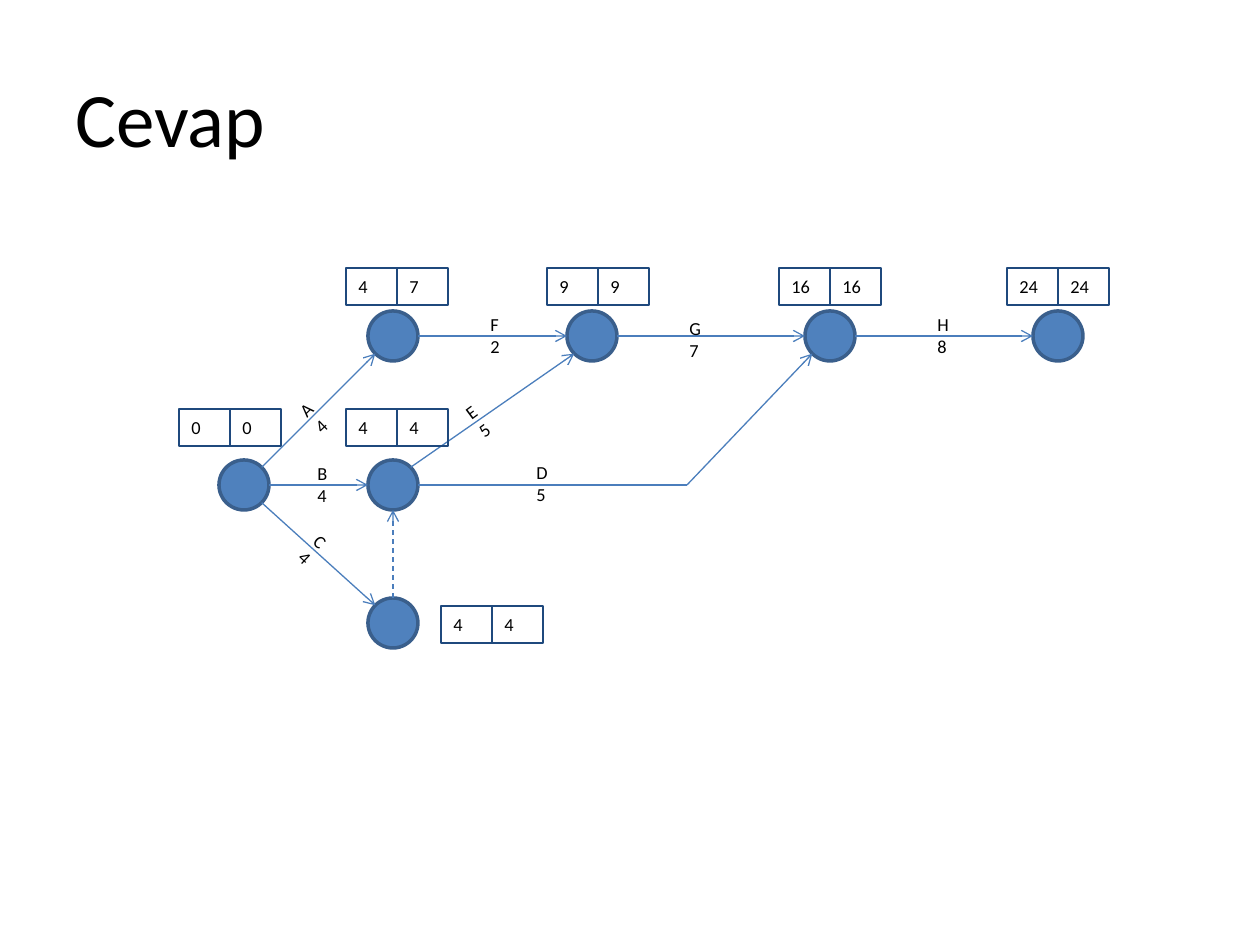
"""Builds the activity network slide with event times."""
import math

import pptx
import pptx.dml.color
import pptx.enum.dml
import pptx.enum.shapes
import pptx.enum.text
import pptx.oxml
import pptx.oxml.ns
import pptx.util

RGBColor = pptx.dml.color.RGBColor
BLACK = RGBColor(0x00, 0x00, 0x00)
NODE_FILL = RGBColor(0x4F, 0x81, 0xBD)
NODE_EDGE = RGBColor(0x3A, 0x5F, 0x8C)
ARROW = RGBColor(0x4B, 0x7E, 0xBC)
CELL_EDGE = RGBColor(0x1F, 0x49, 0x7D)

TITLE = "Cevap"
FONT = "Calibri"
PX_PER_INCH = 126
RADIUS = 25
CELL_WIDTH, CELL_HEIGHT = 51, 37
LABEL_WIDTH, LABEL_HEIGHT = 69, 57

EVENTS = {
    "start": (244, 485),
    "after A": (393, 336),
    "after C": (393, 623),
    "after B": (393, 485),
    "after F": (592, 336),
    "after G": (830, 336),
    "end": (1058, 336),
}
BENDS = {"D bend": (687, 485)}
ARROWS = [
    ("start", "after A"),
    ("start", "after B"),
    ("start", "after C"),
    ("after A", "after F"),
    ("after F", "after G"),
    ("after G", "end"),
    ("after B", "after F"),
    ("after C", "after B"),
    ("after B", "D bend"),
    ("D bend", "after G"),
]
DUMMY = ("after C", "after B")
ACTIVITIES = [
    ("B", "4", 305, 456, 0),
    ("A", "4", 291, 377, 316),
    ("C", "4", 291, 533, 43.3),
    ("F", "2", 478, 307, 0),
    ("D", "5", 524, 455, 0),
    ("G", "7", 677, 311, 0),
    ("H", "8", 925, 307, 0),
    ("E", "5", 457, 382, 323.3),
]
TIMES = [
    ("0", "0", 179, 409),
    ("4", "7", 346, 268),
    ("9", "9", 547, 268),
    ("16", "16", 779, 268),
    ("24", "24", 1007, 268),
    ("4", "4", 346, 409),
    ("4", "4", 441, 606),
]


def px(*lengths):
    return [round(length * pptx.util.Inches(1) / PX_PER_INCH) for length in lengths]


def write(holder, lines, size):
    frame = holder.text_frame
    frame.word_wrap = True
    frame.vertical_anchor = pptx.enum.text.MSO_ANCHOR.MIDDLE
    frame.text = "\n".join(lines)
    for paragraph in frame.paragraphs:
        paragraph.alignment = pptx.enum.text.PP_ALIGN.LEFT
        paragraph.font.name = FONT
        paragraph.font.size = pptx.util.Pt(size)
        paragraph.font.color.rgb = BLACK


def add_outlined(slide, kind, box, edge, width):
    shape = slide.shapes.add_shape(kind, *px(*box))
    shape.shadow.inherit = False
    shape.line.color.rgb = edge
    shape.line.width = pptx.util.Pt(width)
    return shape


def add_event(slide, x, y):
    box = (x - RADIUS, y - RADIUS, 2 * RADIUS, 2 * RADIUS)
    node = add_outlined(slide, pptx.enum.shapes.MSO_SHAPE.OVAL, box, NODE_EDGE, 2)
    node.fill.solid()
    node.fill.fore_color.rgb = NODE_FILL


def sign(number):
    return (number > 0) - (number < 0)


def rim_point(name, toward):
    if name in BENDS:
        return BENDS[name]
    x, y = EVENTS[name]
    dx, dy = sign(toward[0] - x), sign(toward[1] - y)
    reach = RADIUS / math.hypot(dx, dy)
    return x + dx * reach, y + dy * reach


def add_arrow(slide, source, target):
    points = {**EVENTS, **BENDS}
    start = rim_point(source, points[target])
    finish = rim_point(target, points[source])
    arrow = slide.shapes.add_connector(
        pptx.enum.shapes.MSO_CONNECTOR.STRAIGHT, *px(*start, *finish)
    )
    arrow.line.color.rgb = ARROW
    arrow.line.width = pptx.util.Pt(0.75)
    if (source, target) == DUMMY:
        arrow.line.dash_style = pptx.enum.dml.MSO_LINE.DASH
    if target in EVENTS:
        head = pptx.oxml.parse_xml(
            f'<a:tailEnd {pptx.oxml.ns.nsdecls("a")} type="arrow"/>'
        )
        arrow.line._get_or_add_ln().append(head)
    effects = pptx.oxml.parse_xml(f'<a:effectLst {pptx.oxml.ns.nsdecls("a")}/>')
    arrow._element.spPr.append(effects)


def add_label(slide, activity, duration, x, y, angle):
    label = slide.shapes.add_textbox(*px(x, y, LABEL_WIDTH, LABEL_HEIGHT))
    label.rotation = angle
    write(label, [activity, duration], 10.5)


def add_times(slide, earliest, latest, x, y):
    for column, time in enumerate((earliest, latest)):
        box = (x + column * CELL_WIDTH, y, CELL_WIDTH, CELL_HEIGHT)
        cell = add_outlined(
            slide, pptx.enum.shapes.MSO_SHAPE.RECTANGLE, box, CELL_EDGE, 0.75
        )
        cell.fill.background()
        write(cell, [time], 10.5)


def main():
    deck = pptx.Presentation()
    deck.slide_width, deck.slide_height = px(1260, 945)
    slide = deck.slides.add_slide(deck.slide_layouts[6])
    write(slide.shapes.add_textbox(*px(63, 38, 1134, 157)), [TITLE], 44)
    for center in EVENTS.values():
        add_event(slide, *center)
    for ends in ARROWS:
        add_arrow(slide, *ends)
    for activity in ACTIVITIES:
        add_label(slide, *activity)
    for times in TIMES:
        add_times(slide, *times)
    deck.save("out.pptx")


if __name__ == "__main__":
    main()
